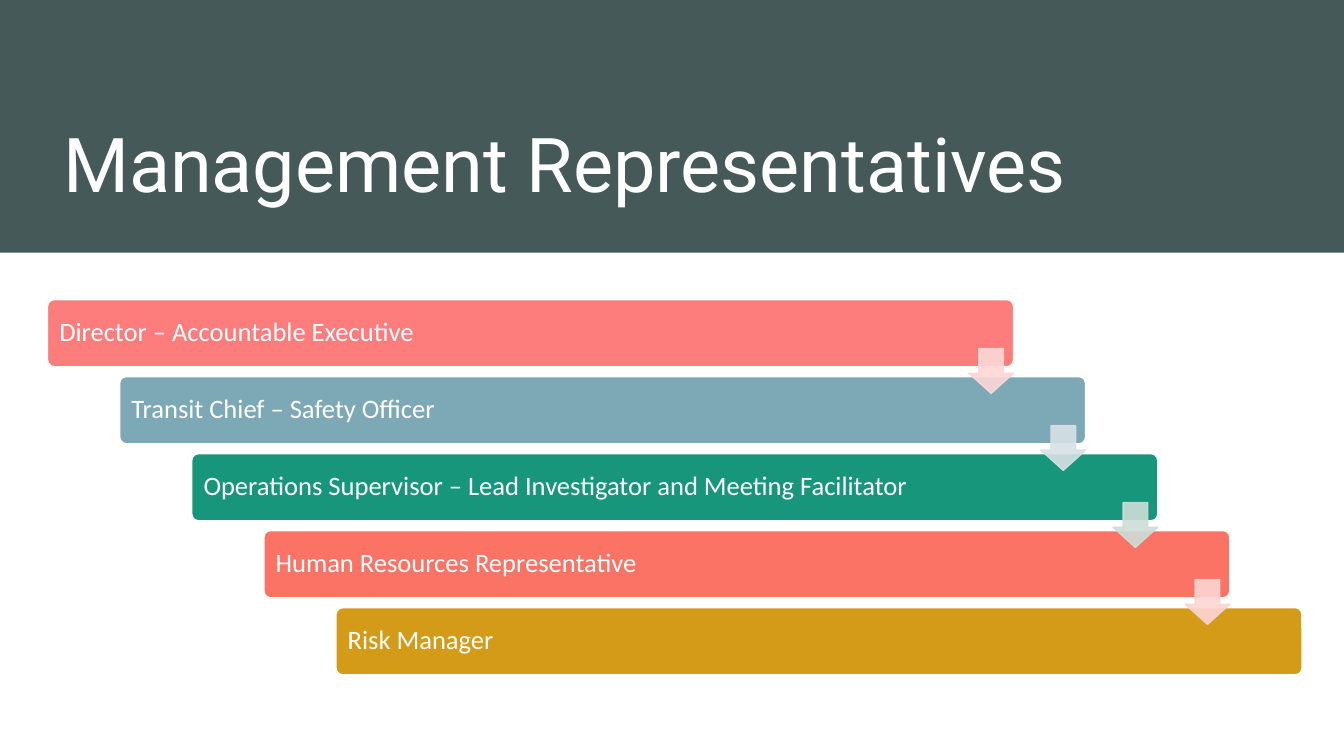
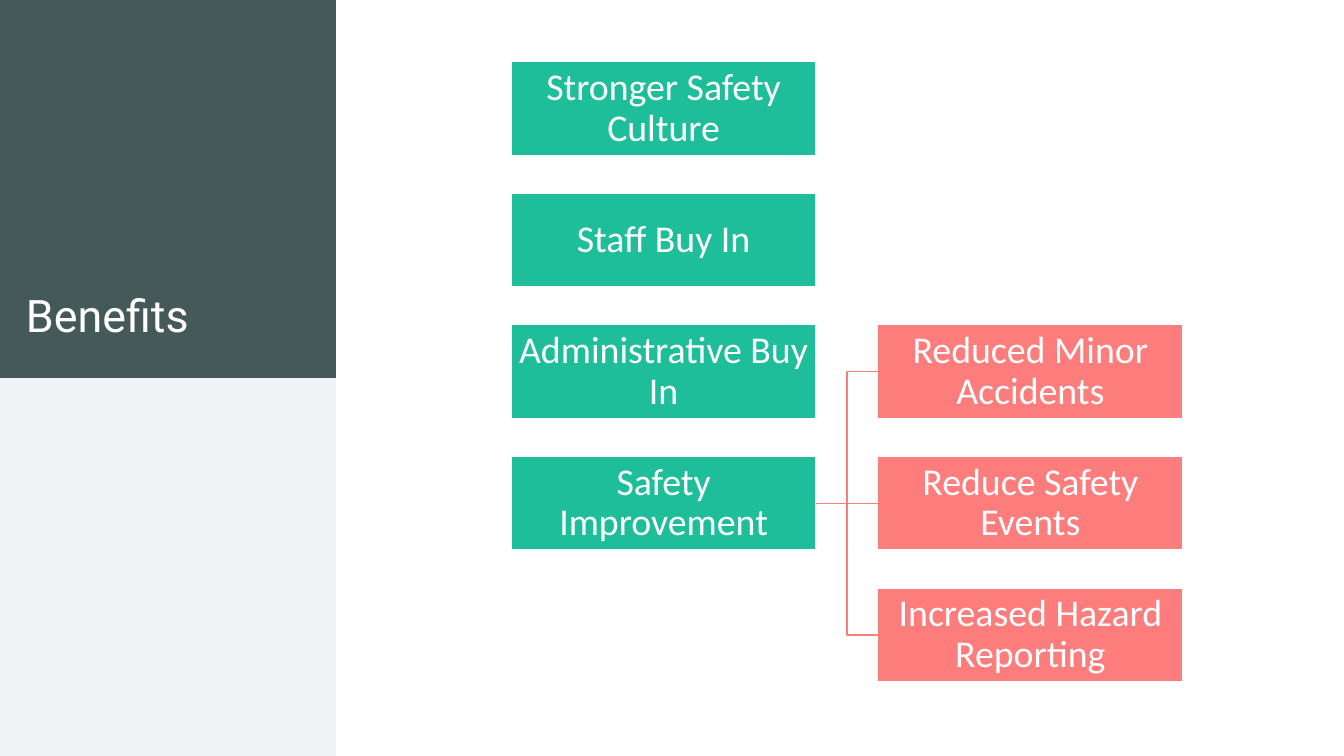
from dataclasses import dataclass
from typing import NamedTuple

from pptx import Presentation
from pptx.dml.color import RGBColor
from pptx.enum.shapes import MSO_CONNECTOR as Link, MSO_SHAPE as Preset
from pptx.enum.text import MSO_ANCHOR as Anchor, MSO_AUTO_SIZE as AutoSize, PP_ALIGN as Align
from pptx.oxml.ns import qn
from pptx.oxml.xmlchemy import OxmlElement
from pptx.shapes.autoshape import Shape
from pptx.slide import Slide
from pptx.text.text import TextFrame
from pptx.util import Emu, Pt

EMU_PER_PX = 6350


class Area(NamedTuple):
    left: int
    top: int
    width: int
    height: int


@dataclass(frozen=True)
class Theme:
    title_font: str = "Roboto"
    body_font: str = "Calibri"
    title_size: int = 54
    side_title_size: int = 32
    role_size: int = 19
    benefit_size: int = 27
    line_width: int = 1
    white: str = "FFFFFF"
    band: str = "465959"
    panel: str = "F0F3F3"
    green: str = "1EBE9B"
    coral: str = "FD7C7C"


THEME = Theme()


@dataclass(frozen=True)
class Role:
    label: str
    color: str
    arrow_color: str = ""


@dataclass(frozen=True)
class Benefit:
    label: str
    column: int
    row: int
    color: str


ROLES = [
    Role("Director – Accountable Executive", THEME.coral, "FED7D7"),
    Role("Transit Chief – Safety Officer", "7DA8B5", "D7E1E5"),
    Role("Operations Supervisor – Lead Investigator and Meeting Facilitator", "17967B", "CCDDD7"),
    Role("Human Resources Representative", "FB7365", "FDD5D3"),
    Role("Risk Manager", "D39B17"),
]
GAINS = [
    Benefit(label, 0, row, THEME.green)
    for row, label in enumerate(
        ["Stronger Safety Culture", "Staff Buy In", "Administrative Buy In", "Safety Improvement"]
    )
]
RESULTS = [
    Benefit(label, 1, row, THEME.coral)
    for row, label in enumerate(
        ["Reduced Minor Accidents", "Reduce Safety Events", "Increased Hazard Reporting"], start=2
    )
]

SLIDE_WIDTH, SLIDE_HEIGHT = 1920, 1080
TOP_BAND = Area(0, 0, SLIDE_WIDTH, 361)
SIDE_BAND = Area(0, 0, 480, 540)
SIDE_PANEL = Area(0, 540, 480, 540)
FIRST_ROLE = Area(68, 428, 1380, 96)
ROLE_STEP_X, ROLE_STEP_Y = 103, 110
ARROW_OFFSET_X, ARROW_OFFSET_Y, ARROW_SIZE = 1316, 70, 64
FIRST_BENEFIT = Area(730, 88, 436, 134)
BENEFIT_STEP_X, BENEFIT_STEP_Y = 524, 188
LEFT_SITE, RIGHT_SITE = 1, 3


def px(length: int) -> Emu:
    return Emu(length * EMU_PER_PX)


def rgb(color: str) -> RGBColor:
    return RGBColor.from_string(color)


def write(
    frame: TextFrame,
    text: str,
    *,
    size: int,
    font: str = THEME.body_font,
    color: str = THEME.white,
    align: Align = Align.LEFT,
    anchor: Anchor = Anchor.MIDDLE,
    inset_x: int = 14,
    inset_y: int = 7,
    spacing: float = 0.9,
) -> None:
    frame.word_wrap = True
    frame.auto_size = AutoSize.NONE
    frame.vertical_anchor = anchor
    frame.margin_left = frame.margin_right = px(inset_x)
    frame.margin_top = frame.margin_bottom = px(inset_y)
    paragraph = frame.paragraphs[0]
    paragraph.alignment = align
    paragraph.line_spacing = spacing
    run = paragraph.add_run()
    run.text = text
    run.font.name = font
    run.font.size = Pt(size)
    run.font.color.rgb = rgb(color)


def draw(slide: Slide, preset: Preset, area: Area, color: str, outline: str = "") -> Shape:
    shape = slide.shapes.add_shape(preset, *map(px, area))
    shape.shadow.inherit = False
    shape.fill.solid()
    shape.fill.fore_color.rgb = rgb(color)
    if outline:
        shape.line.color.rgb = rgb(outline)
        shape.line.width = Pt(THEME.line_width)
    else:
        shape.line.fill.background()
    return shape


def set_opacity(shape: Shape, percent: int) -> None:
    for color in shape.element.spPr.iter(qn("a:srgbClr")):
        alpha = OxmlElement("a:alpha")
        alpha.set("val", str(percent * 1000))
        color.append(alpha)


def add_titled_slide(deck: Presentation, text: str, band: Area, area: Area, size: int) -> Slide:
    slide = deck.slides.add_slide(deck.slide_layouts.get_by_name("Title Only"))
    draw(slide, Preset.RECTANGLE, band, THEME.band)
    title = slide.shapes.title
    slide.shapes.element.append(title.element)
    title.left, title.top, title.width, title.height = map(px, area)
    write(title.text_frame, text, size=size, font=THEME.title_font, anchor=Anchor.BOTTOM)
    return slide


def draw_role(slide: Slide, index: int, role: Role) -> None:
    area = FIRST_ROLE._replace(
        left=FIRST_ROLE.left + index * ROLE_STEP_X, top=FIRST_ROLE.top + index * ROLE_STEP_Y
    )
    bar = draw(slide, Preset.ROUNDED_RECTANGLE, area, role.color, THEME.white)
    bar.adjustments[0] = 0.1
    write(bar.text_frame, role.label, size=THEME.role_size)


def draw_arrow(slide: Slide, index: int, color: str) -> None:
    area = Area(
        FIRST_ROLE.left + ARROW_OFFSET_X + index * ROLE_STEP_X,
        FIRST_ROLE.top + ARROW_OFFSET_Y + index * ROLE_STEP_Y,
        ARROW_SIZE,
        ARROW_SIZE,
    )
    arrow = draw(slide, Preset.DOWN_ARROW, area, color, color)
    arrow.adjustments[0] = 0.55
    arrow.adjustments[1] = 0.45
    set_opacity(arrow, 90)


def draw_benefit(slide: Slide, benefit: Benefit) -> Shape:
    area = FIRST_BENEFIT._replace(
        left=FIRST_BENEFIT.left + benefit.column * BENEFIT_STEP_X,
        top=FIRST_BENEFIT.top + benefit.row * BENEFIT_STEP_Y,
    )
    box = draw(slide, Preset.RECTANGLE, area, benefit.color, THEME.white)
    write(
        box.text_frame,
        benefit.label,
        size=THEME.benefit_size,
        align=Align.CENTER,
        inset_x=3,
        inset_y=3,
    )
    return box


def connect(slide: Slide, source: Shape, target: Shape) -> None:
    kind = Link.STRAIGHT if source.top == target.top else Link.ELBOW
    branch = slide.shapes.add_connector(kind, 0, 0, 0, 0)
    branch.begin_connect(source, RIGHT_SITE)
    branch.end_connect(target, LEFT_SITE)
    branch.line.color.rgb = rgb(THEME.coral)
    branch.line.width = Pt(THEME.line_width)
    branch.element.spPr.append(OxmlElement("a:effectLst"))


def build_representatives(deck: Presentation) -> None:
    slide = add_titled_slide(
        deck,
        "Management Representatives",
        TOP_BAND,
        Area(76, 58, 1712, 248),
        THEME.title_size,
    )
    for index, role in enumerate(ROLES):
        draw_role(slide, index, role)
    for index, role in enumerate(ROLES[:-1]):
        draw_arrow(slide, index, role.arrow_color)


def build_benefits(deck: Presentation) -> None:
    slide = add_titled_slide(
        deck, "Benefits", SIDE_BAND, Area(23, 58, 423, 438), THEME.side_title_size
    )
    draw(slide, Preset.RECTANGLE, SIDE_PANEL, THEME.panel)
    gains = [draw_benefit(slide, gain) for gain in GAINS]
    for result in RESULTS:
        connect(slide, gains[-1], draw_benefit(slide, result))


def main() -> None:
    deck = Presentation()
    deck.slide_width, deck.slide_height = px(SLIDE_WIDTH), px(SLIDE_HEIGHT)
    build_representatives(deck)
    build_benefits(deck)
    deck.save("out.pptx")


if __name__ == "__main__":
    main()
